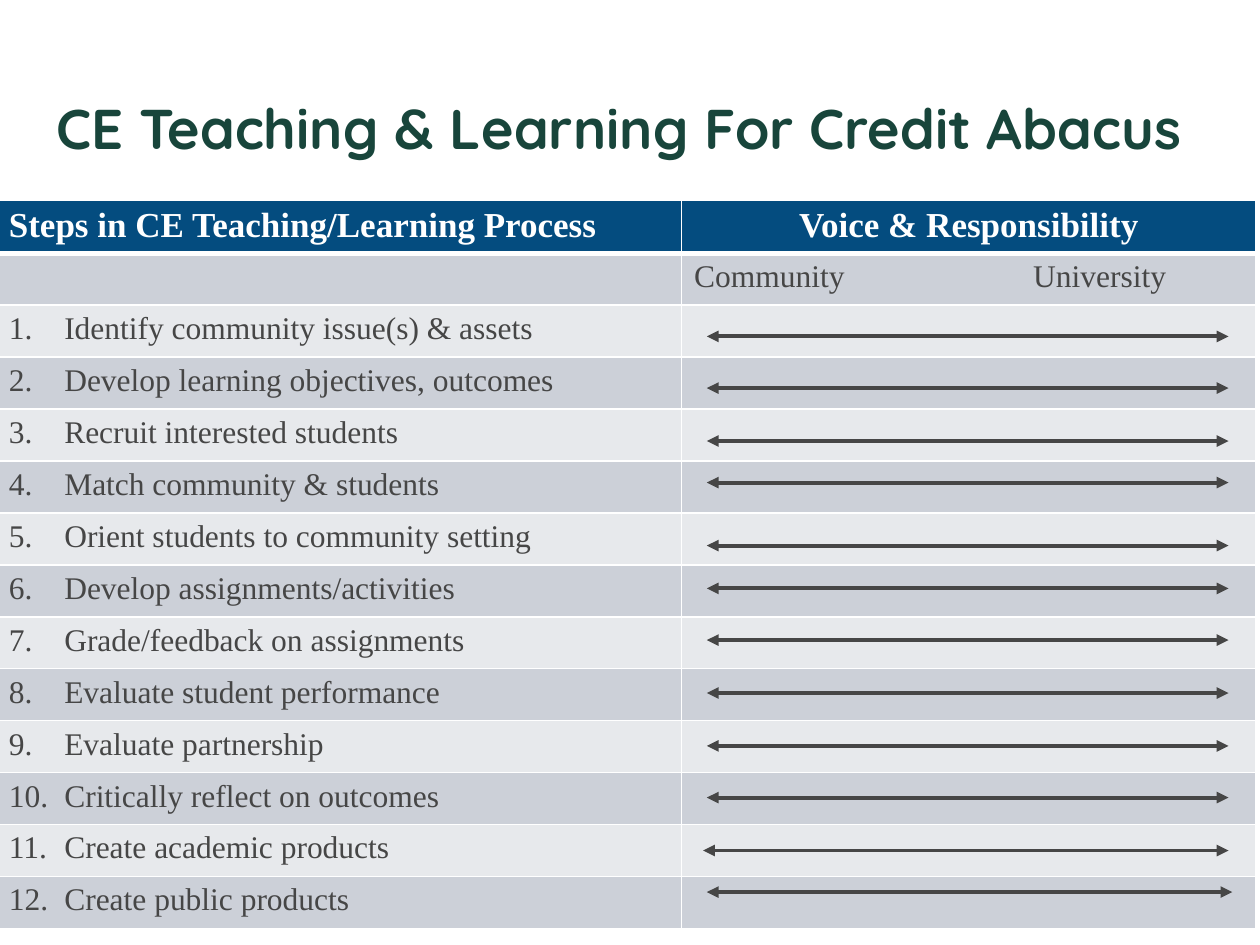
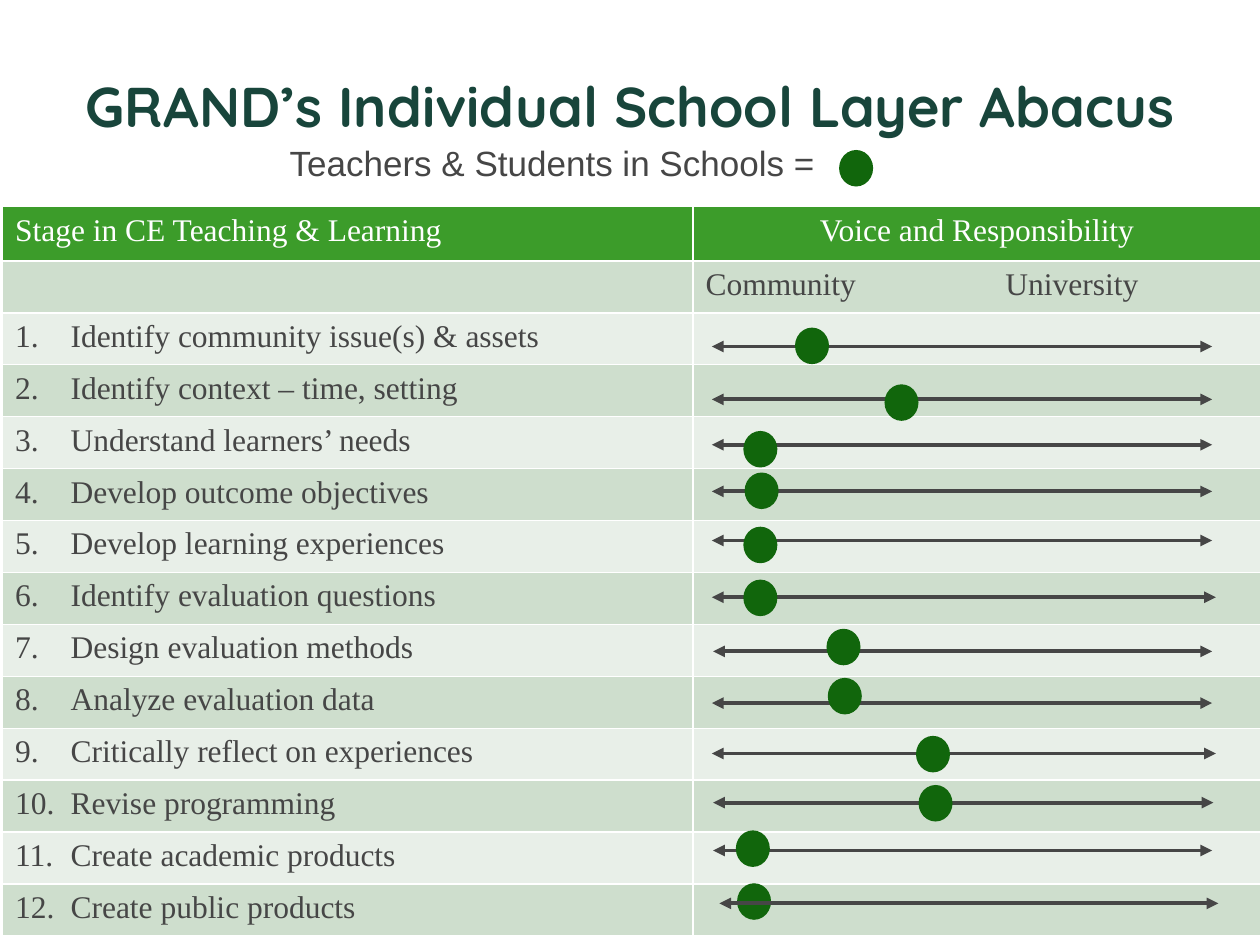
from lxml import etree
from pptx import Presentation
from pptx.dml.color import RGBColor
from pptx.enum.shapes import MSO_CONNECTOR, MSO_SHAPE
from pptx.enum.text import MSO_ANCHOR, MSO_AUTO_SIZE, PP_ALIGN
from pptx.oxml.ns import qn
from pptx.util import Inches, Pt

STRAIGHT = MSO_CONNECTOR.STRAIGHT
OVAL = MSO_SHAPE.OVAL
MIDDLE = MSO_ANCHOR.MIDDLE
FIXED_SIZE = MSO_AUTO_SIZE.NONE
LEFT, CENTER = PP_ALIGN.LEFT, PP_ALIGN.CENTER

WHITE, INK, TITLE_GREEN, DOT_GREEN = "FFFFFF", "464646", "18453B", "11660C"
STEP_ROW_HEIGHT = 5.36 / 13
NUMBER_INDENT = 0.44
DOT_WIDTH, DOT_HEIGHT = 0.27, 0.29


def rgb(hex_color):
    return RGBColor.from_string(hex_color)


def write(paragraph, text, color, align=LEFT, **font_format):
    paragraph.alignment = align
    run = paragraph.add_run()
    run.text = text
    run.font.color.rgb = rgb(color)
    for attribute, value in font_format.items():
        setattr(run.font, attribute, value)


abacuses = [
    {
        "title": "CE Teaching & Learning For Credit Abacus",
        "title_at": (0.25, 0.67, 9.33, 0.67),
        "left": -0.03, "top": 1.59, "columns": (5.44, 4.56),
        "header_height": 0.42, "header_rule": 3, "header_fill": "044C7F",
        "header_font": {"size": Pt(20), "bold": True},
        "bands": ("CCD0D8", "E7E9EC"),
        "headings": ("Steps in CE Teaching/Learning Process", "Voice & Responsibility"),
        "university_tab": 2.69,
        "steps": [
            "Identify community issue(s) & assets",
            "Develop learning objectives, outcomes",
            "Recruit interested students",
            "Match community & students",
            "Orient students to community setting",
            "Develop assignments/activities",
            "Grade/feedback on assignments",
            "Evaluate student performance",
            "Evaluate partnership",
            "Critically reflect on outcomes",
            "Create academic products",
            "Create public products",
        ],
        "rod_ends": (5.61, 9.75),
        "rod_heights": (2.67, 3.08, 3.5, 3.83, 4.33, 4.67, 5.08, 5.5, 5.92, 6.33, 6.75, 7.08),
        "odd_rods": {11: (5.58, 9.75, 6.75), 12: (5.61, 9.78, 7.08)},
        "beads": {},
    },
    {
        "title": "GRAND’s Individual School Layer Abacus",
        "title_at": (0.38, 0.5, 9.25, 0.67),
        "left": 0.02, "top": 1.64, "columns": (5.48, 4.51),
        "header_height": 0.43, "header_rule": 1, "header_fill": "3C9C2A",
        "header_font": {"size": Pt(18), "bold": False},
        "bands": ("CEDECD", "E8EFE8"),
        "headings": ("Stage in CE Teaching & Learning", "Voice and Responsibility"),
        "university_tab": 2.38,
        "steps": [
            "Identify community issue(s) & assets",
            "Identify context – time, setting",
            "Understand learners’ needs",
            "Develop outcome objectives",
            "Develop learning experiences",
            "Identify evaluation questions",
            "Design evaluation methods",
            "Analyze evaluation data",
            "Critically reflect on experiences",
            "Revise programming",
            "Create academic products",
            "Create public products",
        ],
        "rod_ends": (5.65, 9.62),
        "rod_heights": (2.75, 3.17, 3.53, 3.9, 4.29, 4.74, 5.17, 5.58, 5.98, 6.37, 6.75, 7.17),
        "odd_rods": {
            6: (5.65, 9.65, 4.74), 7: (5.66, 9.62, 5.17), 9: (5.65, 9.65, 5.98),
            10: (5.66, 9.63, 6.37), 11: (5.66, 9.62, 6.75), 12: (5.71, 9.67, 7.17),
        },
        "beads": {
            1: (6.31, 2.6), 2: (7.02, 3.05), 3: (5.9, 3.42), 4: (5.91, 3.75),
            5: (5.9, 4.18), 6: (5.9, 4.6), 7: (6.56, 4.99), 8: (6.57, 5.38),
            9: (7.27, 5.84), 10: (7.29, 6.23), 11: (5.84, 6.59), 12: (5.85, 7.01),
        },
        "legend": "Teachers & Students in Schools =",
        "legend_bead": (6.66, 1.19),
    },
]

prs = Presentation()
prs.slide_width, prs.slide_height = Inches(10), Inches(7.5)

for abacus in abacuses:
    slide = prs.slides.add_slide(prs.slide_layouts[5])
    title = slide.shapes.title
    for side, length in zip(("left", "top", "width", "height"), abacus["title_at"]):
        setattr(title, side, Inches(length))
    title.text_frame.auto_size = FIXED_SIZE
    title.text_frame.vertical_anchor = MIDDLE
    write(title.text_frame.paragraphs[0], abacus["title"], TITLE_GREEN, CENTER,
          name="Quicksand", size=Pt(32), bold=True)

    row_heights = [abacus["header_height"]] + [STEP_ROW_HEIGHT] * 13
    steps_table = slide.shapes.add_table(
        14, 2, Inches(abacus["left"]), Inches(abacus["top"]),
        Inches(sum(abacus["columns"])), Inches(sum(row_heights))).table
    for column, width in zip(steps_table.columns, abacus["columns"]):
        column.width = Inches(width)
    for row, height in zip(steps_table.rows, row_heights):
        row.height = Inches(height)

    for row_index, row in enumerate(steps_table.rows):
        row_fill = abacus["bands"][(row_index + 1) % 2] if row_index else abacus["header_fill"]
        rules = {"lnL": 1, "lnR": 1, "lnT": 1, "lnB": 1}
        if row_index < 2:
            rules["lnT" if row_index else "lnB"] = abacus["header_rule"]
        for cell in row.cells:
            cell.fill.solid()
            cell.fill.fore_color.rgb = rgb(row_fill)
            cell_properties = cell._tc.get_or_add_tcPr()
            for position, (edge, points) in enumerate(rules.items()):
                border = etree.Element(qn(f"a:{edge}"), w=str(Pt(points)))
                border_fill = etree.SubElement(border, qn("a:solidFill"))
                etree.SubElement(border_fill, qn("a:srgbClr"), val=WHITE)
                cell_properties.insert(position, border)

    for column_index, heading in enumerate(abacus["headings"]):
        write(steps_table.cell(0, column_index).text_frame.paragraphs[0], heading, WHITE,
              CENTER if column_index else LEFT, name="Times New Roman", **abacus["header_font"])

    body_font = {"name": "Times New Roman", "size": Pt(18), "bold": False}
    voices = steps_table.cell(1, 1).text_frame.paragraphs[0]
    tab_list = etree.SubElement(voices._p.get_or_add_pPr(), qn("a:tabLst"))
    etree.SubElement(tab_list, qn("a:tab"), pos=str(Inches(abacus["university_tab"])), algn="l")
    write(voices, "Community\tUniversity", INK, **body_font)

    for number, step in enumerate(abacus["steps"], 1):
        step_line = steps_table.cell(number + 1, 0).text_frame.paragraphs[0]
        step_properties = step_line._p.get_or_add_pPr()
        step_properties.set("marL", str(Inches(NUMBER_INDENT)))
        step_properties.set("indent", str(-Inches(NUMBER_INDENT)))
        write(step_line, f"{number}.\t{step}", INK, **body_font)

    beads = list(abacus["beads"].values())
    if "legend" in abacus:
        legend = slide.shapes.add_textbox(Inches(2.2), Inches(1.07), Inches(4.99), Inches(0.44))
        legend.text_frame.word_wrap = True
        write(legend.text_frame.paragraphs[0], abacus["legend"], INK, name="Arial", size=Pt(20))
        beads.append(abacus["legend_bead"])

    rods = [abacus["odd_rods"].get(number, (*abacus["rod_ends"], height))
            for number, height in enumerate(abacus["rod_heights"], 1)]
    for start, end, height in rods:
        rod = slide.shapes.add_connector(
            STRAIGHT, Inches(start), Inches(height), Inches(end), Inches(height))
        rod.line.color.rgb = rgb(INK)
        rod.line.width = Pt(2.25)
        rod_line = rod.line._get_or_add_ln()
        for arrowhead in ("headEnd", "tailEnd"):
            etree.SubElement(rod_line, qn(f"a:{arrowhead}"), type="triangle")
        etree.SubElement(rod._element.spPr, qn("a:effectLst"))

    for left, top in beads:
        bead = slide.shapes.add_shape(
            OVAL, Inches(left), Inches(top), Inches(DOT_WIDTH), Inches(DOT_HEIGHT))
        bead.shadow.inherit = False
        bead.fill.solid()
        bead.fill.fore_color.rgb = rgb(DOT_GREEN)
        bead.line.fill.background()

    slide.shapes._spTree.append(rod._element)

prs.save("out.pptx")
